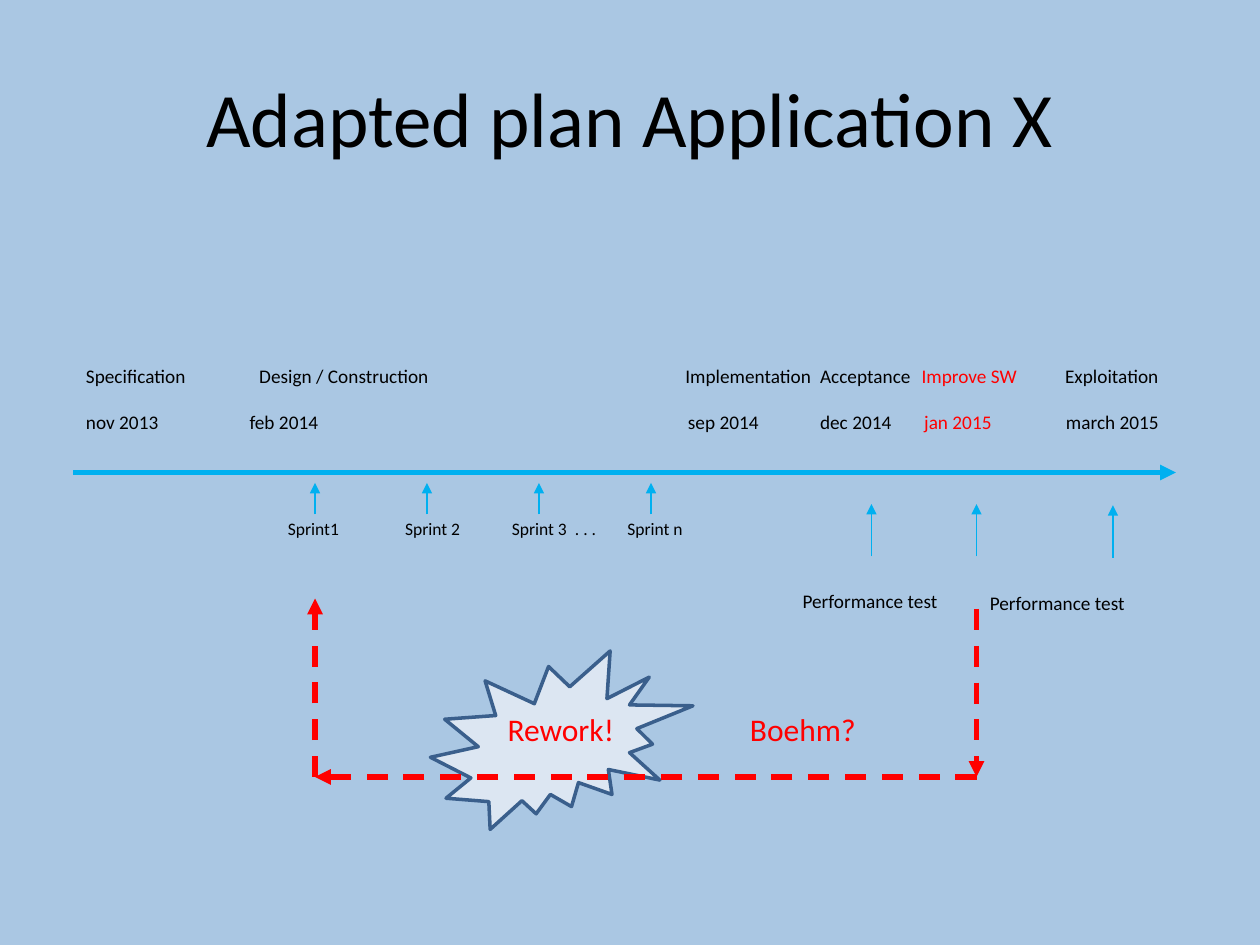
from lxml.etree import SubElement
from pptx import Presentation
from pptx.dml.color import RGBColor
from pptx.enum.dml import MSO_LINE as Dash
from pptx.enum.shapes import MSO_CONNECTOR as Conn, MSO_SHAPE as Shape
from pptx.enum.text import MSO_ANCHOR as Anchor, MSO_AUTO_SIZE as Auto, PP_ALIGN as Align
from pptx.oxml.ns import qn
from pptx.util import Pt

BACK = RGBColor(0xAA, 0xC7, 0xE3)
BLACK = RGBColor(0, 0, 0)
RED = RGBColor(0xFF, 0, 0)
BLUE = RGBColor(0, 0xB0, 0xF0)
PALE = RGBColor(0xDC, 0xE6, 0xF2)
NAVY = RGBColor(0x3A, 0x5F, 0x8C)

deck = Presentation()
deck.slide_width, deck.slide_height = Pt(720), Pt(540)
slide = deck.slides.add_slide(deck.slide_layouts[5])
slide.background.fill.solid()
slide.background.fill.fore_color.rgb = BACK
shapes = slide.shapes


def add_arrow(x1, y1, x2, y2, color, width, dash=None):
    line = shapes.add_connector(Conn.STRAIGHT, Pt(x1), Pt(y1), Pt(x2), Pt(y2))
    line.line.color.rgb = color
    line.line.width = Pt(width)
    if dash:
        line.line.dash_style = dash
    SubElement(line.line._get_or_add_ln(), qn("a:tailEnd"), type="triangle")
    SubElement(line._element.spPr, qn("a:effectLst"))


def add_text(box, rows, size, wrap=False):
    """Each row is a list of (text, color) runs and a list of tab stops."""
    frame = shapes.add_textbox(*[Pt(v) for v in box]).text_frame
    frame.word_wrap = wrap
    frame.auto_size = Auto.SHAPE_TO_FIT_TEXT
    for i, (runs, stops) in enumerate(rows):
        para = frame.add_paragraph() if i else frame.paragraphs[0]
        if i:
            para.space_before = Pt(13)
        if stops:
            tabs = SubElement(para._p.get_or_add_pPr(), qn("a:tabLst"))
            for stop in stops:
                SubElement(tabs, qn("a:tab"), pos=str(Pt(stop)), algn="l")
        for text, color in runs:
            run = para.add_run()
            run.text = text
            run.font.name = "Calibri"
            run.font.size = Pt(size)
            run.font.color.rgb = color


# Title
title = shapes.title
title.left, title.top, title.width, title.height = Pt(36), Pt(21.6), Pt(648), Pt(90)
title.text_frame.text = "Adapted plan Application X"
title.text_frame.vertical_anchor = Anchor.MIDDLE
para = title.text_frame.paragraphs[0]
para.alignment = Align.CENTER
font = para.runs[0].font
font.name, font.size, font.color.rgb = "Calibri", Pt(44), BLACK

# Rework burst
burst = shapes.add_shape(Shape.EXPLOSION2, Pt(246), Pt(372), Pt(150), Pt(102))
burst.shadow.inherit = False
burst.fill.solid()
burst.fill.fore_color.rgb = PALE
burst.line.color.rgb = NAVY
burst.line.width = Pt(2)

# Time line with its phases and dates
add_arrow(42, 270, 672, 270, BLUE, 3)
phases = [("Specification\tDesign / Construction\tImplementation\tAcceptance\t", BLACK),
          ("Improve SW\t", RED), ("Exploitation", BLACK)]
dates = [("nov 2013\tfeb 2014\tsep 2014\tdec 2014\t", BLACK),
         ("jan 2015\t", RED), ("march 2015", BLACK)]
add_text((42, 204.5, 630, 47.5),
         [(phases, [99, 342.5, 419.5, 477.5, 559.5]),
          (dates, [93.5, 344, 419.5, 479, 560])], 11, wrap=True)

# Sprints
for i in range(4):
    x = 180 + 64 * i
    add_arrow(x, 294, x, 276, BLUE, 0.75)
add_text((157.5, 292.5, 243.5, 19.5),
         [([("Sprint1\tSprint 2\tSprint 3\t. . .\tSprint n", BLACK)],
           [67, 128, 164, 194])], 10)

# Tests
for x, y in ((498, 288), (558, 288), (636, 288.7)):
    add_arrow(x, y + 30, x, y, BLUE, 0.75)
for x, y in ((451.5, 333.2), (558.5, 334.2)):
    add_text((x, y, 93, 20.5), [([("Performance test", BLACK)], [])], 11)

# Way back to the first sprint
turns = [(558, 348), (558, 444), (180, 444), (180, 342)]
for start, end in zip(turns, turns[1:]):
    add_arrow(*start, *end, RED, 3, Dash.DASH)
add_text((283, 402, 216, 29), [([("Rework!\tBoehm?", RED)], [138.5])], 18)

deck.save("out.pptx")
